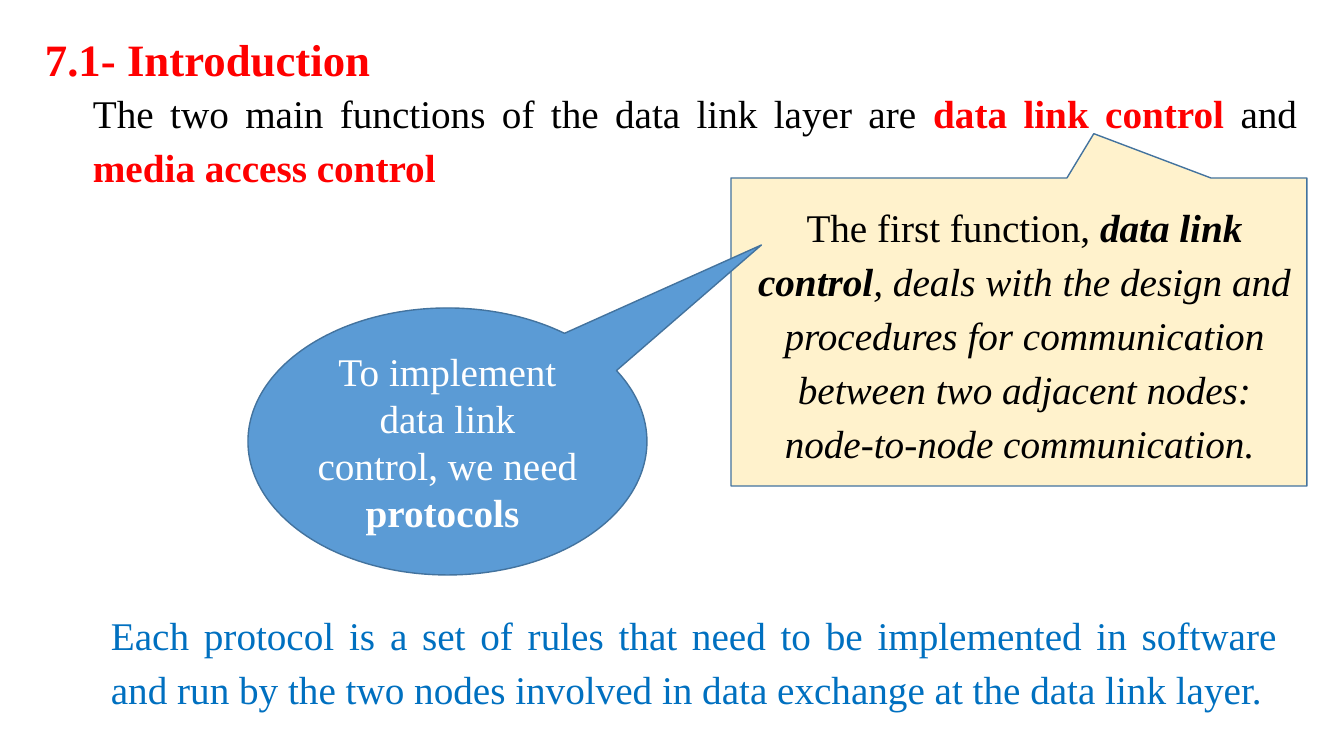
from pptx import Presentation, util as u
from pptx.dml.color import RGBColor
from pptx.enum import shapes as sh, text as tx

PX = 914400 / 100.8
BLACK, RED, WHITE, BLUE = "000000", "FF0000", "FFFFFF", "0070C0"
LEFT, MID = tx.PP_ALIGN.JUSTIFY, tx.PP_ALIGN.CENTER


def color(code):
    return RGBColor.from_string(code)


def write(shape, parts, align, gap=1.15, size=28, wrap=True):
    """Fill a shape with one paragraph of (words, colour, style) parts."""
    frame = shape.text_frame
    frame.word_wrap = wrap
    para = frame.paragraphs[0]
    para.alignment, para.line_spacing = align, gap
    for words, code, style in parts:
        run = para.add_run()
        run.text = words
        font = run.font
        font.name, font.size = "Times New Roman", u.Pt(size)
        font.color.rgb = color(code)
        font.bold, font.italic = "b" in style, "i" in style


deck = Presentation()
deck.slide_width, deck.slide_height = round(1344 * PX), round(756 * PX)
slide = deck.slides.add_slide(deck.slide_layouts[6])
group = slide.shapes.add_group_shape()

# Callouts: the box sits in a group with its text
kinds = sh.MSO_SHAPE
calls = []
for home, kind, spot, tip, fill in [
    (group, kinds.RECTANGULAR_CALLOUT, (731, 178, 576, 308), (0.13, -0.644), "FFF2CC"),
    (slide, kinds.OVAL_CALLOUT, (248, 308, 399, 267), (0.787, -0.736), "5B9BD5"),
]:
    call = home.shapes.add_shape(kind, *[round(n * PX) for n in spot])
    call.adjustments[0], call.adjustments[1] = tip
    call.shadow.inherit = False
    call.fill.solid()
    call.fill.fore_color.rgb = color(fill)
    call.line.color.rgb = color("43739E")
    call.line.width = u.Pt(1)
    calls.append(call)

oval = calls[1]
oval.text_frame.vertical_anchor = tx.MSO_ANCHOR.MIDDLE
write(oval, [("To implement data link control, we need ", WHITE, ""),
             ("protocols ", WHITE, "b")], MID, 1.0)

# Text boxes: home, place, parts, alignment, line spacing, size, wrap
for home, spot, parts, *look in [
    (group, (743, 191, 563, 283),
     [("The first function, ", BLACK, ""),
      ("data link control", BLACK, "bi"),
      (", deals with the design and procedures for communication between "
       "two adjacent nodes: node-to-node communication. ", BLACK, "i")], MID),
    (slide, (35, 0, 349, 83),
     [("7.1- Introduction", RED, "b")], LEFT, 1.5, 32, False),
    (slide, (83, 77, 1224, 119),
     [("The two main functions of the data link layer are ", BLACK, ""),
      ("data link control ", RED, "b"),
      ("and ", BLACK, ""),
      ("media access control ", RED, "b")], LEFT),
    (slide, (101, 599, 1186, 119),
     [("Each protocol is a set of rules that need to be implemented in software "
       "and run by the two nodes involved in data exchange at the data link "
       "layer. ", BLUE, "")], LEFT),
]:
    box = home.shapes.add_textbox(*[round(n * PX) for n in spot])
    box.text_frame.auto_size = tx.MSO_AUTO_SIZE.SHAPE_TO_FIT_TEXT
    write(box, parts, *look)

deck.save("out.pptx")
